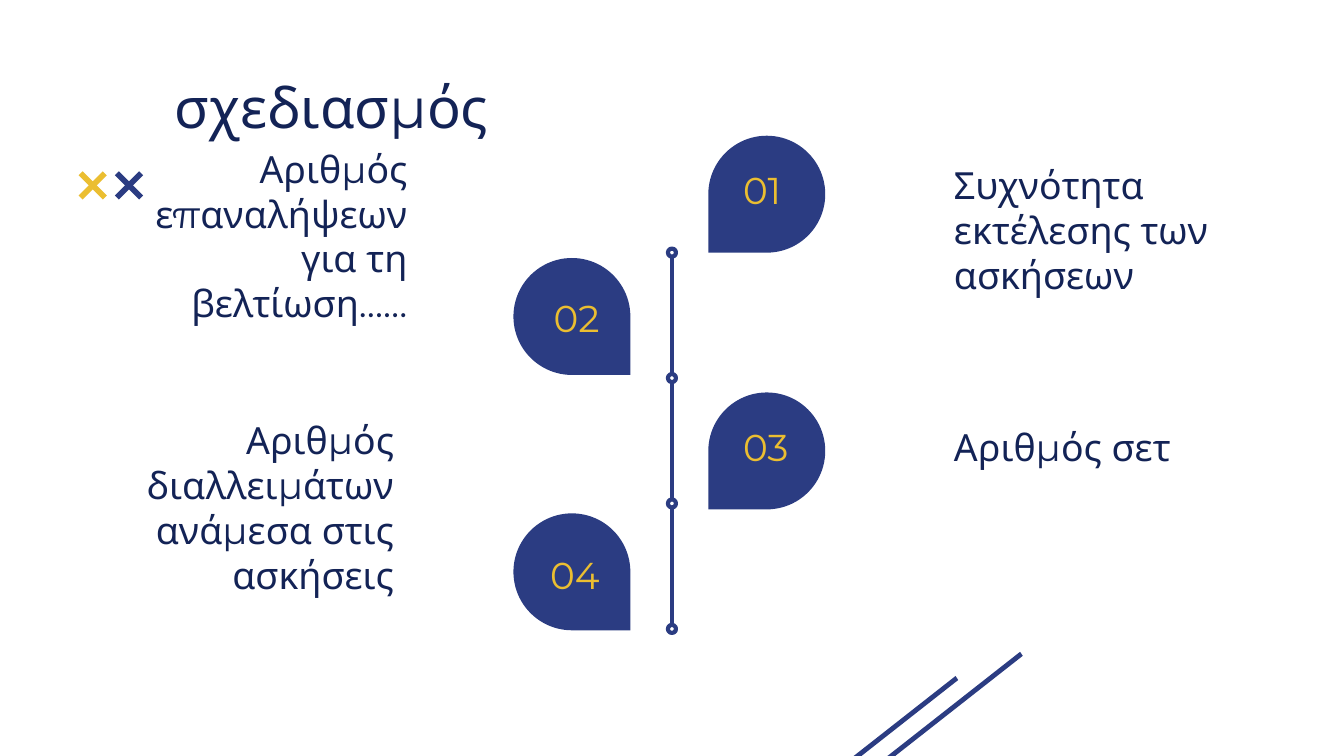
from lxml.etree import SubElement
from pptx import Presentation
from pptx.dml.color import RGBColor
from pptx.enum.shapes import MSO_CONNECTOR, MSO_SHAPE
from pptx.enum.text import MSO_ANCHOR, MSO_AUTO_SIZE, PP_ALIGN
from pptx.oxml.ns import qn
from pptx.util import Inches, Pt

BLUE, GOLD, INK, WHITE = "2B3C82", "EBBE31", "132356", "FFFFFF"
LEFT, RIGHT = PP_ALIGN.LEFT, PP_ALIGN.RIGHT
TOP, BOTTOM = MSO_ANCHOR.TOP, MSO_ANCHOR.BOTTOM

WIDE = 10
TITLE = "σχεδιασμός"
DROPS = [(5.27, 1.01, 180), (5.27, 2.92, 180), (3.82, 1.92, 90), (3.82, 3.82, 90)]
LABELS = [
    ("01", 5.43, 1.11, LEFT),
    ("02", 3.55, 2.06, RIGHT),
    ("03", 5.43, 3.02, LEFT),
    ("04", 3.55, 3.97, RIGHT),
]
NOTES = [
    ("Συχνότητα εκτέλεσης των ασκήσεων", 7, 1.11, LEFT, TOP),
    ("Αριθμός επαναλήψεων για τη βελτίωση……", 0.7, 1.95, RIGHT, BOTTOM),
    ("Αριθμός σετ", 7, 3.02, LEFT, BOTTOM),
    ("Αριθμός διαλλειμάτων ανάμεσα στις ασκήσεις", 0.6, 3.97, RIGHT, BOTTOM),
]
BAR = [(1.35, 0), (0, 1.06), (0.02, 1.09), (1.37, 0.03)]
BARS = [(6.24, 4.85), (5.76, 5.03)]
CROSSES = [(0.6, GOLD), (0.87, BLUE)]
AXIS, START, END, DOTS = 5, 1.88, 4.68, 4


def color(code):
    """Turn a hex string into a colour."""
    return RGBColor.from_string(code)


def write(shape, text, size, ink, align, anchor):
    """Fill a text shape with one run."""
    frame = shape.text_frame
    frame.word_wrap = True
    frame.auto_size = MSO_AUTO_SIZE.NONE
    frame.vertical_anchor = anchor
    frame.margin_left = frame.margin_right = Inches(0.1)
    frame.margin_top = frame.margin_bottom = Inches(0.1)
    para = frame.paragraphs[0]
    para.alignment = align
    run = para.add_run()
    run.text = text
    run.font.name = "Montserrat"
    run.font.size = Pt(size)
    run.font.color.rgb = color(ink)


def label(slide, text, left, top, width, ink, align, anchor):
    """Add a text box of the common height."""
    box = slide.shapes.add_textbox(
        Inches(left), Inches(top), Inches(width), Inches(0.57))
    write(box, text, 20, ink, align, anchor)


def paint(shape, fill, edge=None):
    """Set fill and outline and drop the shadow."""
    shape.shadow.inherit = False
    shape.fill.solid()
    shape.fill.fore_color.rgb = color(fill)
    if edge:
        shape.line.color.rgb = color(edge)
        shape.line.width = Pt(2.25)
    else:
        shape.line.fill.background()


def stroke(slide, ends, ink, width):
    """Add a straight line between two points."""
    line = slide.shapes.add_connector(
        MSO_CONNECTOR.STRAIGHT, *[Inches(n) for n in ends])
    line.line.color.rgb = color(ink)
    line.line.width = Pt(width)
    SubElement(line._element.spPr, qn("a:effectLst"))


def bar(slide, left, top):
    """Add one slanted bar."""
    points = [(Inches(left + x), Inches(top + y)) for x, y in BAR]
    pen = slide.shapes.build_freeform(*points[0])
    pen.add_line_segments(points[1:], close=True)
    paint(pen.convert_to_shape(), BLUE)


def axis(slide):
    """Draw the timeline with evenly spaced dots."""
    stroke(slide, (AXIS, START, AXIS, END), BLUE, 2.25)
    step, size = (END - START) / (DOTS - 1), 0.06
    for i in range(DOTS):
        dot = slide.shapes.add_shape(
            MSO_SHAPE.OVAL, Inches(AXIS - size / 2),
            Inches(START + i * step - size / 2), Inches(size), Inches(size))
        paint(dot, WHITE, BLUE)


def main():
    """Build the slide and save it."""
    deck = Presentation()
    deck.slide_width, deck.slide_height = Inches(WIDE), Inches(WIDE * 9 / 16)
    slide = deck.slides.add_slide(deck.slide_layouts[5])
    for spot in BARS:
        bar(slide, *spot)
    title = slide.shapes.title
    title.left, title.top = Inches(1.2), Inches(0.45)
    title.width, title.height = Inches(3.78), Inches(0.69)
    write(title, TITLE, 30, INK, LEFT, BOTTOM)
    for left, top, turn in DROPS:
        drop = slide.shapes.add_shape(
            MSO_SHAPE.TEAR, Inches(left), Inches(top), Inches(0.87), Inches(0.87))
        drop.rotation = turn
        paint(drop, BLUE)
    for text, left, top, align in LABELS:
        label(slide, text, left, top, 1.01, GOLD, align, BOTTOM)
    for text, left, top, align, anchor in NOTES:
        label(slide, text, left, top, 2.43, INK, align, anchor)
    axis(slide)
    high, low = 1.29, 1.47
    for left, ink in CROSSES:
        for start, end in [(high, low), (low, high)]:
            stroke(slide, (left + 0.18, start, left, end), ink, 3)
    deck.save("out.pptx")


if __name__ == "__main__":
    main()
